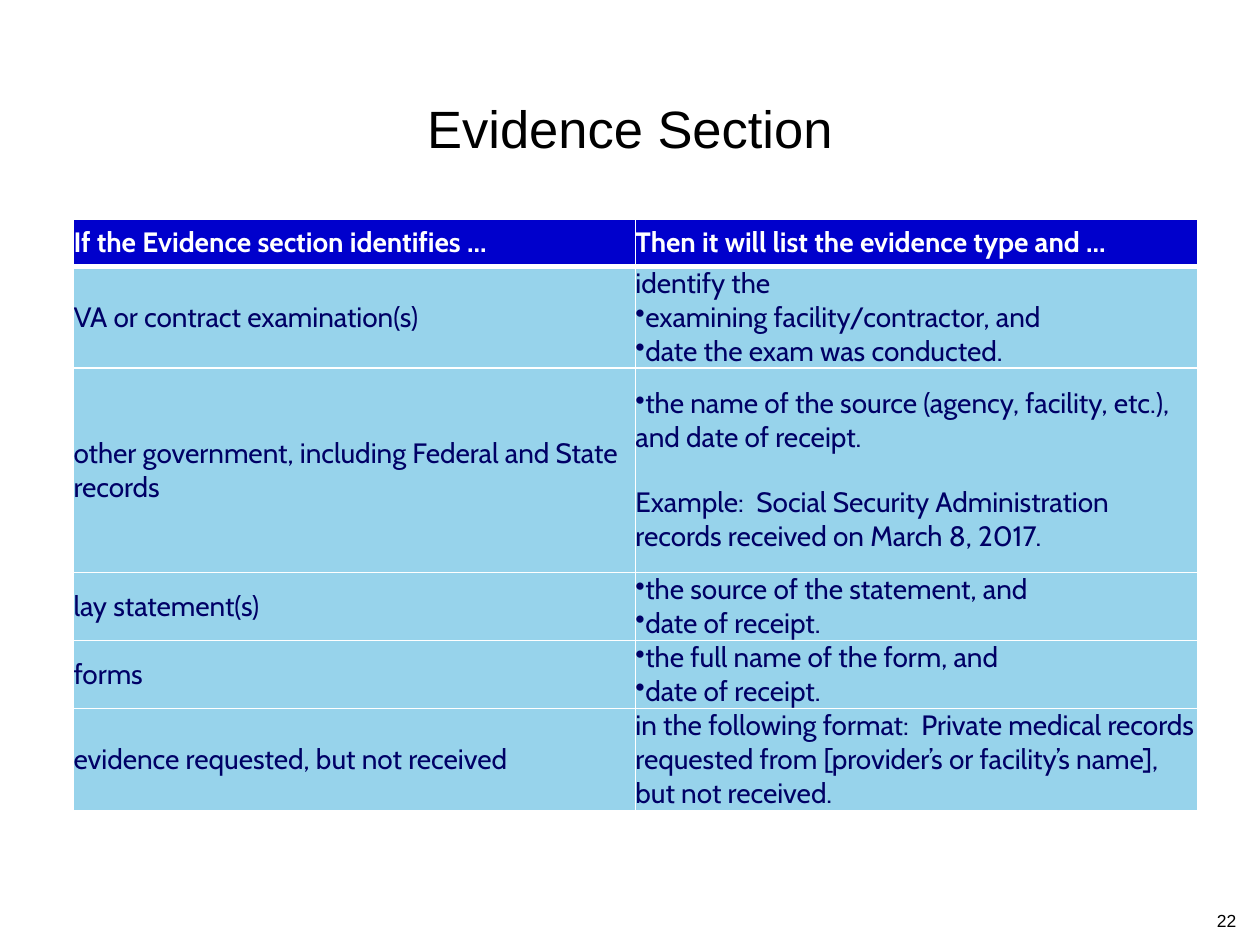
from lxml.etree import SubElement
from pptx import Presentation
from pptx.dml.color import RGBColor
from pptx.enum.text import MSO_ANCHOR as Anchor, PP_ALIGN as Align
from pptx.oxml.ns import qn
from pptx.util import Pt

# Content: a leading "•" marks a bulleted paragraph
TITLE = "Evidence Section"
PAGE_NUMBER = "22"
HEADINGS = ("If the Evidence section identifies ...",
            "Then it will list the evidence type and ...")
EVIDENCE = [
    ("VA or contract examination(s)",
     ["identify the", "•examining facility/contractor, and",
      "•date the exam was conducted."]),
    ("other government, including Federal and State records",
     ["•the name of the source (agency, facility, etc.), and date of receipt.",
      "Example:  Social Security Administration records received on March 8, 2017."]),
    ("lay statement(s)",
     ["•the source of the statement, and", "•date of receipt."]),
    ("forms",
     ["•the full name of the form, and", "•date of receipt."]),
    ("evidence requested, but not received",
     ["in the following format:  Private medical records requested from "
      "[provider’s or facility’s name], but not received."]),
]

# Style
BLACK = RGBColor(0x00, 0x00, 0x00)
WHITE = RGBColor(0xFF, 0xFF, 0xFF)
HEADER_BLUE = RGBColor(0x00, 0x00, 0xCC)
BODY_BLUE = RGBColor(0x97, 0xD3, 0xEB)
NAVY = RGBColor(0x00, 0x00, 0x66)
ROW_HEIGHTS = (26.64, 58.32, 116.64, 38.88, 38.88, 58.32)
COLUMN_WIDTH = 321.12
EXAMPLE_GAP = 18


def style(paragraph, font_name, size, color, bold=False):
    for run in paragraph.runs:
        font = run.font
        font.name, font.size, font.bold = font_name, Pt(size), bold
        font.color.rgb = color


def add_bullet(paragraph):
    properties = paragraph._p.get_or_add_pPr()
    properties.set("marL", "0")
    properties.set("indent", "0")
    SubElement(properties, qn("a:buChar"), char="•")


def add_borders(cell, bottom_width):
    properties = cell._tc.get_or_add_tcPr()
    for side, width in (("L", 1), ("R", 1), ("T", 1), ("B", bottom_width)):
        line = SubElement(properties, qn(f"a:ln{side}"), w=str(Pt(width)))
        fill = SubElement(line, qn("a:solidFill"))
        SubElement(fill, qn("a:srgbClr"), val=str(WHITE))


def fill_cell(cell, lines, header):
    add_borders(cell, 3 if header else 1)
    cell.fill.solid()
    cell.fill.fore_color.rgb = HEADER_BLUE if header else BODY_BLUE
    cell.vertical_anchor = Anchor.MIDDLE
    cell.margin_left = cell.margin_right = cell.margin_top = cell.margin_bottom = 0
    cell.text_frame.text = "\n".join(line.removeprefix("•") for line in lines)
    for paragraph, line in zip(cell.text_frame.paragraphs, lines):
        if line.startswith("•"):
            add_bullet(paragraph)
        if line.startswith("Example"):
            paragraph.space_before = Pt(EXAMPLE_GAP)
        style(paragraph, "Cabin", 16, WHITE if header else NAVY, header)


prs = Presentation()
prs.slide_width, prs.slide_height = Pt(720), Pt(540)
slide = prs.slides.add_slide(prs.slide_layouts[5])

# Title
title = slide.shapes.title
title.left, title.top, title.width, title.height = Pt(0), Pt(48.24), Pt(720), Pt(55.44)
title_frame = title.text_frame
title_frame.text = TITLE
title_frame.vertical_anchor = Anchor.TOP
title_frame.margin_top = Pt(6.4)
title_frame.paragraphs[0].alignment = Align.CENTER
style(title_frame.paragraphs[0], "Arial", 30, BLACK)

# Evidence table
rows = [([left], [right]) for left, right in [HEADINGS]]
rows += [([kind], details) for kind, details in EVIDENCE]
table = slide.shapes.add_table(len(rows), 2, Pt(42), Pt(125.5),
                               Pt(2 * COLUMN_WIDTH), Pt(sum(ROW_HEIGHTS))).table
for column in table.columns:
    column.width = Pt(COLUMN_WIDTH)
for r, (height, row) in enumerate(zip(ROW_HEIGHTS, rows)):
    table.rows[r].height = Pt(height)
    for c, lines in enumerate(row):
        fill_cell(table.cell(r, c), lines, header=r == 0)

# Page number
page = slide.shapes.add_textbox(Pt(545.76), Pt(519.84), Pt(167.76), Pt(28.8)).text_frame
page.word_wrap = True
page.margin_top = 0
page.text = PAGE_NUMBER
page.paragraphs[0].alignment = Align.RIGHT
page.paragraphs[0].space_after = Pt(4.5)
style(page.paragraphs[0], "Arial", 10, BLACK)

prs.save("out.pptx")
